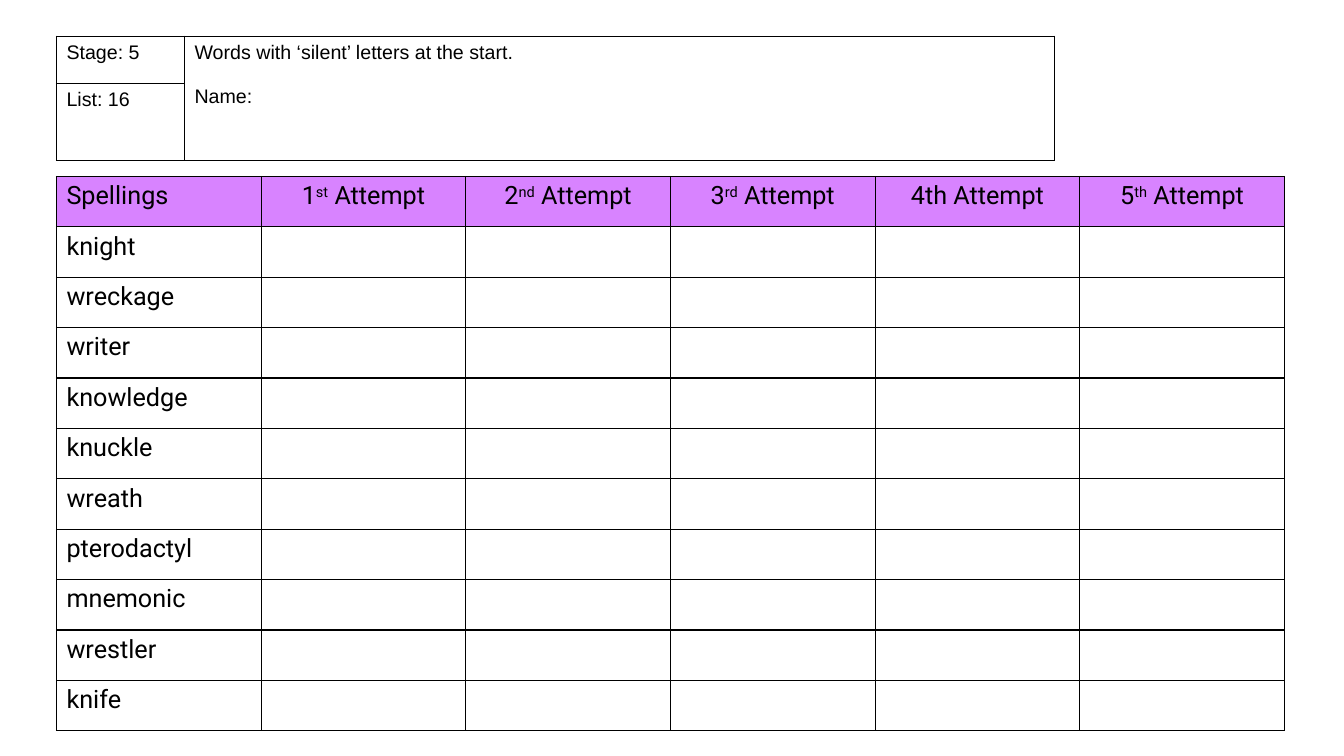
from dataclasses import dataclass

from lxml import etree
from pptx import Presentation
from pptx import util as u
from pptx.dml.color import RGBColor
from pptx.enum import text
from pptx.oxml import ns
from pptx.slide import Slide
from pptx.table import Table, _Cell

COLOURS = {"ink": "000000", "header": "D883FF"}
WORDS = ["knight", "wreckage", "writer", "knowledge", "knuckle",
         "wreath", "pterodactyl", "mnemonic", "wrestler", "knife"]


@dataclass
class Grid:
    left: float
    top: float
    row_height: float
    rows: int
    columns: list[float]


@dataclass
class Style:
    font: str
    size: int


@dataclass
class Attempt:
    number: str
    suffix: str = ""


HEADING = Grid(0.56, 0.36, 0.47, 2, [1.27, 8.63])
SPELLINGS = Grid(0.56, 1.75, 0.5, len(WORDS) + 1, [2.03] * 6)
HEADING_STYLE = Style("Arial", 14)
SPELLING_STYLE = Style("Roboto", 18)
ATTEMPTS = [Attempt("1", "st"), Attempt("2", "nd"), Attempt("3", "rd"),
            Attempt("4th"), Attempt("5", "th")]


def add_borders(cell: _Cell) -> None:
    properties = cell._tc.get_or_add_tcPr()
    for index, side in enumerate(("lnL", "lnR", "lnT", "lnB")):
        line = etree.Element(ns.qn(f"a:{side}"), w=str(u.Pt(1)))
        fill = etree.SubElement(line, ns.qn("a:solidFill"))
        etree.SubElement(fill, ns.qn("a:srgbClr"), val=COLOURS["ink"])
        properties.insert(index, line)


def add_grid(page: Slide, grid: Grid) -> Table:
    """Add a plain table with black borders and no banding."""
    table = page.shapes.add_table(
        grid.rows, len(grid.columns), u.Inches(grid.left), u.Inches(grid.top),
        u.Inches(sum(grid.columns)), u.Inches(grid.row_height * grid.rows)).table
    table.first_row = False
    table.horz_banding = False
    for column, width in zip(table.columns, grid.columns):
        column.width = u.Inches(width)
    for cell in table.iter_cells():
        cell.fill.background()
        add_borders(cell)
    return table


def format_cell(cell: _Cell, style: Style) -> None:
    for para in cell.text_frame.paragraphs:
        for span in para.runs:
            span.font.name = style.font
            span.font.size = u.Pt(style.size)
            span.font.color.rgb = RGBColor.from_string(COLOURS["ink"])


def write_attempt(cell: _Cell, attempt: Attempt) -> None:
    """Write a centred heading with its ordinal suffix raised."""
    para = cell.text_frame.paragraphs[0]
    para.alignment = text.PP_ALIGN.CENTER
    if attempt.suffix:
        para.add_run().text = attempt.number
        raised = para.add_run()
        raised.text = attempt.suffix
        raised.font._element.set("baseline", "30000")
        para.add_run().text = " Attempt"
    else:
        para.text = f"{attempt.number} Attempt"


def add_spellings(page: Slide) -> None:
    table = add_grid(page, SPELLINGS)
    for row, word in enumerate(["Spellings", *WORDS]):
        table.cell(row, 0).text_frame.text = word
    for column, attempt in enumerate(ATTEMPTS, start=1):
        write_attempt(table.cell(0, column), attempt)
    for cell in table.rows[0].cells:
        cell.fill.solid()
        cell.fill.fore_color.rgb = RGBColor.from_string(COLOURS["header"])
    for cell in table.iter_cells():
        format_cell(cell, SPELLING_STYLE)


def add_heading(page: Slide) -> None:
    table = add_grid(page, HEADING)
    topic = table.cell(0, 1)
    topic.merge(table.cell(1, 1))
    table.cell(0, 0).text_frame.text = "Stage: 5"
    table.cell(1, 0).text_frame.text = "List: 16"
    topic.text_frame.text = "Words with ‘silent’ letters at the start.\nName:"
    topic.text_frame.paragraphs[1].space_before = u.Pt(16)
    for cell in table.iter_cells():
        format_cell(cell, HEADING_STYLE)


def main() -> None:
    deck = Presentation()
    deck.slide_width = u.Inches(13.33)
    deck.slide_height = u.Inches(7.5)
    page = deck.slides.add_slide(deck.slide_layouts[6])
    add_spellings(page)
    add_heading(page)
    deck.save("out.pptx")


if __name__ == "__main__":
    main()
